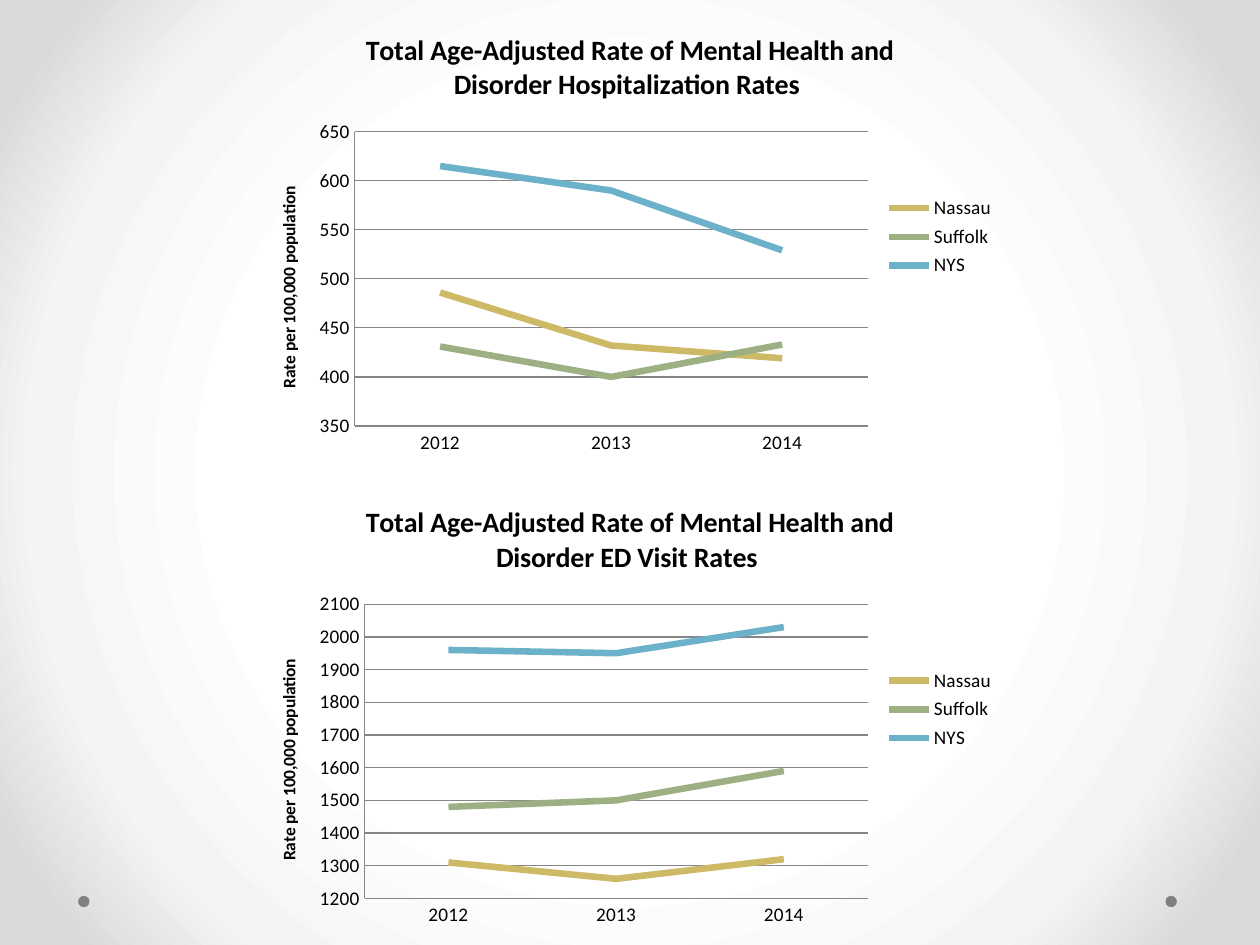
from dataclasses import dataclass

from pptx import Presentation
from pptx.chart.data import CategoryChartData
from pptx.dml.color import RGBColor as RGB
from pptx.enum.chart import XL_CHART_TYPE as ChartType, XL_LEGEND_POSITION as LegendPos
from pptx.enum.chart import XL_MARKER_STYLE as Marker, XL_TICK_MARK as Tick
from pptx.enum.shapes import MSO_SHAPE as Shape
from pptx.oxml import parse_xml
from pptx.oxml.ns import nsdecls
from pptx.util import Inches, Pt

YEARS = ["2012", "2013", "2014"]
AXIS_TITLE = "Rate per 100,000 population"
CHARTS = [
    {"title": "Total Age-Adjusted Rate of Mental Health and Disorder Hospitalization Rates ",
     "scale": (350, 650, 50),
     "series": {"Nassau": (486, 432, 419), "Suffolk": (431, 400, 433), "NYS": (615, 590, 529)}},
    {"title": "Total Age-Adjusted Rate of Mental Health and Disorder ED Visit Rates ",
     "scale": (1200, 2100, 100),
     "series": {"Nassau": (1310, 1260, 1320), "Suffolk": (1480, 1500, 1590),
                "NYS": (1960, 1950, 2030)}},
]


@dataclass(frozen=True)
class Theme:
    font: str = "Calibri"
    ink: str = "000000"
    grid: str = "868686"
    dot: str = "808080"
    lines: tuple = ("CEB966", "9CB084", "6BB1C9")
    backdrop: tuple = ((50, "FFFFFF"), (76, "F4F4F4"), (92, "DADADA"))
    title: int = 16
    label: int = 11
    axis_title: int = 10
    line: float = 3.75
    hairline: float = 0.75


T = Theme()
W, H = Inches(10), Inches(7.5)
CHART_W, CHART_H = 0.6 * W, 0.48 * H
DOT = Inches(0.09)


def set_backdrop(slide):
    stops = "".join(f'<a:gs pos="{pos * 1000}"><a:srgbClr val="{color}"/></a:gs>'
                    for pos, color in T.backdrop)
    slide.element.cSld.insert(0, parse_xml(
        f'<p:bg {nsdecls("p", "a")}><p:bgPr><a:gradFill rotWithShape="1">'
        f'<a:gsLst>{stops}</a:gsLst><a:path path="circle">'
        '<a:fillToRect l="50000" t="50000" r="50000" b="50000"/></a:path>'
        '</a:gradFill><a:effectLst/></p:bgPr></p:bg>'))


def add_dot(slide, x):
    sp = slide.shapes.add_shape(Shape.OVAL, int(x), Inches(7.11), DOT, DOT)
    sp.shadow.inherit = False
    sp.fill.solid()
    sp.fill.fore_color.rgb = RGB.from_string(T.dot)
    sp.line.fill.background()


def style_font(font, size, bold=False):
    font.name, font.size, font.bold = T.font, Pt(size), bold
    font.color.rgb = RGB.from_string(T.ink)


def style_line(line, color, width):
    line.color.rgb = RGB.from_string(color)
    line.width = Pt(width)


def set_title(tf, text, size):
    tf.text = text
    style_font(tf.paragraphs[0].font, size, True)


def add_line_chart(slide, top, title, scale, series):
    data = CategoryChartData()
    data.categories = YEARS
    for name, values in series.items():
        data.add_series(name, values)
    chart = slide.shapes.add_chart(ChartType.LINE, int((W - CHART_W) / 2), int(top),
                                   int(CHART_W), int(CHART_H), data).chart
    style_font(chart.font, T.label)
    chart.has_title = True
    set_title(chart.chart_title.text_frame, title, T.title)
    chart.chart_title.include_in_layout = False
    chart.has_legend = True
    chart.legend.position = LegendPos.RIGHT
    chart.legend.include_in_layout = False
    style_font(chart.legend.font, T.label)

    values = chart.value_axis
    values.minimum_scale, values.maximum_scale, values.major_unit = scale
    style_line(values.major_gridlines.format.line, T.grid, T.hairline)
    tf = values.axis_title.text_frame
    set_title(tf, AXIS_TITLE, T.axis_title)
    body = tf._txBody.bodyPr
    body.set("rot", "-5400000")
    body.set("vert", "horz")
    for axis in (chart.category_axis, values):
        axis.major_tick_mark = axis.minor_tick_mark = Tick.NONE
        style_font(axis.tick_labels.font, T.label)
        style_line(axis.format.line, T.grid, T.hairline)

    plot = chart.plots[0]
    plot.vary_by_categories = False
    for line, color in zip(plot.series, T.lines):
        line.smooth = False
        line.marker.style = Marker.NONE
        style_line(line.format.line, color, T.line)


def main():
    prs = Presentation()
    prs.slide_width, prs.slide_height = W, H
    slide = prs.slides.add_slide(prs.slide_layouts[6])
    set_backdrop(slide)
    for x in (0.925 * W, 0.062 * W):
        add_dot(slide, x)
    for row, content in enumerate(CHARTS):
        add_line_chart(slide, Inches(0.08) + row * H / 2, **content)
    prs.save("out.pptx")


if __name__ == "__main__":
    main()
